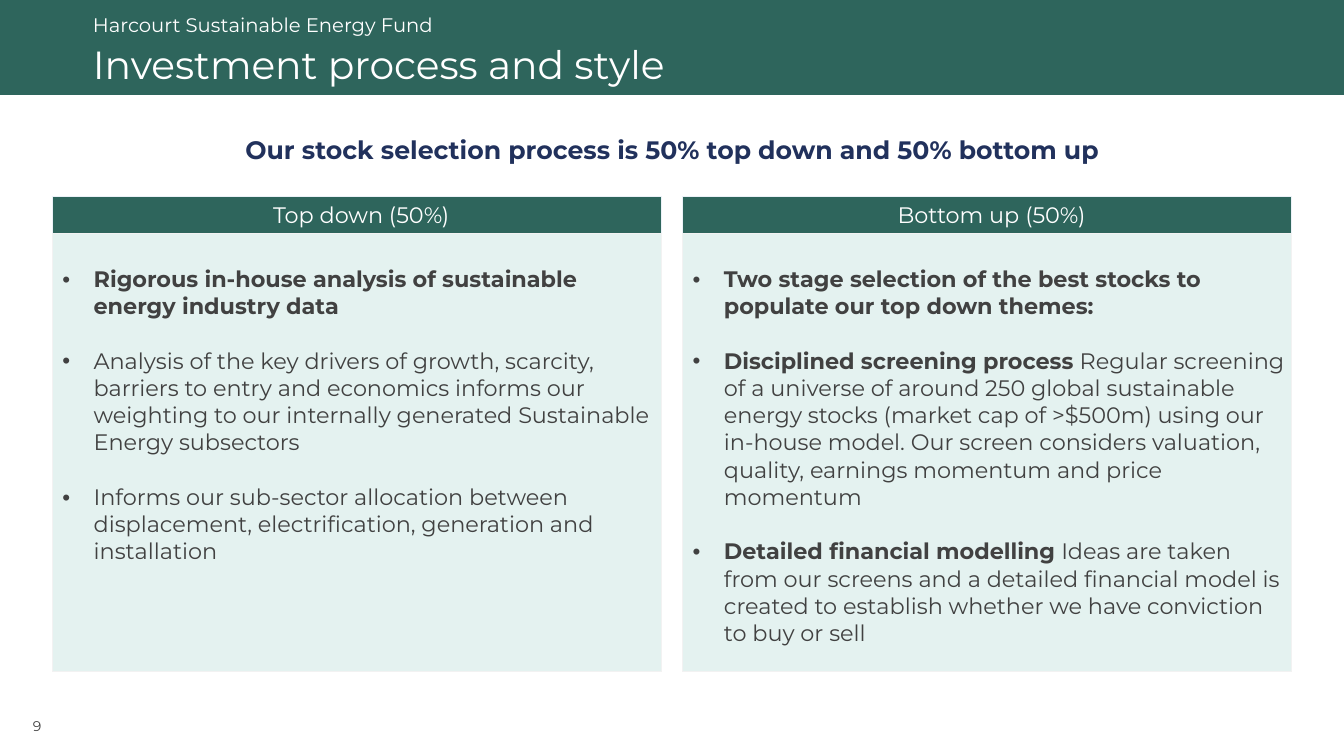
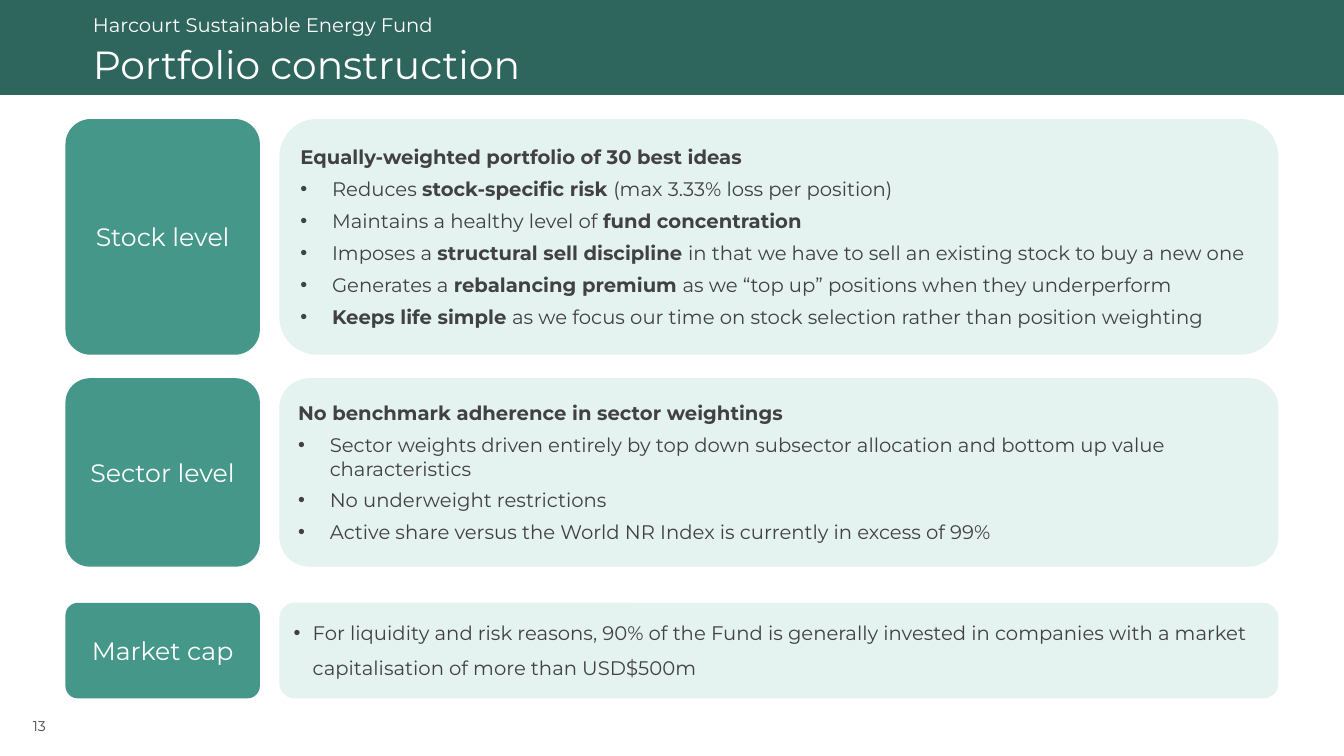
from dataclasses import dataclass

from lxml import etree
from pptx import Presentation
from pptx import util as u
from pptx.dml import color
from pptx.enum import shapes, text
from pptx.oxml import ns


@dataclass(frozen=True)
class Theme:
    font: str = "Montserrat"
    dark_green: str = "2E655C"
    mid_green: str = "45978A"
    pale_green: str = "A6D6CE"
    pale_opacity: int = 30
    navy: str = "21315C"
    grey: str = "414141"
    white: str = "FFFFFF"
    header_border: str = "EBF1F7"
    body_border: str = "F2F2F2"
    title_size: int = 28
    heading_size: int = 18
    column_size: int = 16
    text_size: int = 14
    number_size: int = 10


@dataclass(frozen=True)
class Box:
    left: float
    top: float
    width: float
    height: float

    def lengths(self):
        return [u.Cm(value) for value in (self.left, self.top, self.width, self.height)]


THEME = Theme()
SLIDE_WIDTH, SLIDE_HEIGHT = 33.87, 19.05
BAND = Box(0, 0, SLIDE_WIDTH, 2.39)
TITLE = Box(2.34, 0.99, 29.2, 1.37)
FUND_NAME = Box(2.34, 0.25, 29.2, 0.56)
PAGE_NUMBER = Box(0.58, 17.78, 1.68, 1.02)
HEADLINE = Box(2.34, 2.87, 29.2, 1.37)

COLUMNS = [
    ("Top down (50%)", [
        "**Rigorous in-house analysis of sustainable energy industry data**",
        "Analysis of the key drivers of growth, scarcity, barriers to entry and economics "
        "informs our weighting to our internally generated Sustainable Energy subsectors",
        "Informs our sub-sector allocation between displacement, electrification, "
        "generation and installation",
    ]),
    ("Bottom up (50%)", [
        "**Two stage selection of the best stocks to populate our top down themes:**",
        "**Disciplined screening process** Regular screening of a universe of around 250 "
        "global sustainable energy stocks (market cap of >$500m) using our in-house model. "
        "Our screen considers valuation, quality, earnings momentum and price momentum",
        "**Detailed financial modelling** Ideas are taken from our screens and a detailed "
        "financial model is created to establish whether we have conviction to buy or sell",
    ]),
]

LEVELS = [
    ("Stock level", 3.0, 5.94, "Equally-weighted portfolio of 30 best ideas", [
        "Reduces **stock-specific risk **(max 3.33% loss per position)",
        "Maintains a healthy level of **fund concentration**",
        "Imposes a **structural sell discipline **in that we have to sell an existing "
        "stock to buy a new one",
        "Generates a **rebalancing premium **as we “top up” positions when they underperform",
        "**Keeps life simple **as we focus our time on stock selection rather than "
        "position weighting",
    ]),
    ("Sector level", 9.53, 4.75, "No benchmark adherence in sector weightings", [
        "Sector weights driven entirely by top down subsector allocation and bottom up "
        "value characteristics",
        "No underweight restrictions",
        "Active share versus the World NR Index is currently in excess of 99%",
    ]),
    ("Market cap", 15.19, 2.41, None, [
        "For liquidity and risk reasons, 90% of the Fund is generally invested in companies "
        "with a market capitalisation of more than USD$500m",
    ]),
]


def rgb(value):
    return color.RGBColor.from_string(value)


def set_fill(target, value, opacity=100):
    target.fill.solid()
    target.fill.fore_color.rgb = rgb(value)
    if opacity < 100:
        colour = target.fill._xPr.find(ns.qn("a:solidFill")).find(ns.qn("a:srgbClr"))
        etree.SubElement(colour, ns.qn("a:alpha"), val=str(opacity * 1000))


def set_borders(cell, sides):
    properties = cell._tc.get_or_add_tcPr()
    for index, (side, value, width) in enumerate(sides):
        line = etree.Element(ns.qn(f"a:ln{side}"), w=str(int(u.Pt(width))))
        solid = etree.SubElement(line, ns.qn("a:solidFill"))
        etree.SubElement(solid, ns.qn("a:srgbClr"), val=value)
        properties.insert(index, line)


def set_margins(target, left, top, right, bottom):
    target.margin_left, target.margin_top = u.Cm(left), u.Cm(top)
    target.margin_right, target.margin_bottom = u.Cm(right), u.Cm(bottom)


def set_bullet(paragraph, indent):
    properties = paragraph._p.get_or_add_pPr()
    properties.set("marL", str(int(u.Cm(indent))))
    properties.set("indent", str(-int(u.Cm(indent))))
    if indent:
        etree.SubElement(properties, ns.qn("a:buFont"), typeface="Arial")
        etree.SubElement(properties, ns.qn("a:buChar"), char="•")
    else:
        etree.SubElement(properties, ns.qn("a:buNone"))


def write(paragraph, words, size, value, align=text.PP_ALIGN.LEFT, indent=0,
          before=0, after=0, spacing=1.0):
    paragraph.alignment = align
    paragraph.line_spacing = spacing
    paragraph.space_before, paragraph.space_after = u.Pt(before), u.Pt(after)
    set_bullet(paragraph, indent)
    for index, part in enumerate(words.split("**")):
        if part:
            run = paragraph.add_run()
            run.text = part
            run.font.name = THEME.font
            run.font.size = u.Pt(size)
            run.font.bold = index % 2 == 1
            run.font.color.rgb = rgb(value)


def next_paragraph(text_frame, index):
    return text_frame.add_paragraph() if index else text_frame.paragraphs[0]


def add_box(slide, kind, box, value, opacity=100):
    shape = slide.shapes.add_shape(kind, *box.lengths())
    shape.shadow.inherit = False
    shape.line.fill.background()
    set_fill(shape, value, opacity)
    return shape


def add_text(slide, box, anchor, words, size, value, **options):
    text_frame = slide.shapes.add_textbox(*box.lengths()).text_frame
    text_frame.word_wrap = True
    text_frame.vertical_anchor = anchor
    write(text_frame.paragraphs[0], words, size, value, **options)


def prepare_layout(presentation):
    layout = presentation.slide_layouts[1]
    for placeholder, box in zip(layout.placeholders, (TITLE, FUND_NAME)):
        placeholder.left, placeholder.top, placeholder.width, placeholder.height = box.lengths()
    return layout


def move_band_to_layout(slide, layout):
    band = add_box(slide, shapes.MSO_SHAPE.RECTANGLE, BAND, THEME.dark_green)
    layout.shapes._spTree.insert(2, band._element)


def add_page(presentation, layout, title, number):
    slide = presentation.slides.add_slide(layout)
    heading, fund_name = slide.shapes.title, slide.placeholders[1]
    for placeholder, words, size, anchor in (
        (heading, title, THEME.title_size, text.MSO_ANCHOR.MIDDLE),
        (fund_name, "Harcourt Sustainable Energy Fund", THEME.text_size, text.MSO_ANCHOR.TOP),
    ):
        text_frame = placeholder.text_frame
        text_frame.auto_size = text.MSO_AUTO_SIZE.NONE
        text_frame.vertical_anchor = anchor
        set_margins(text_frame, 0, 0.13, 0.25, 0.13)
        write(text_frame.paragraphs[0], words, size, THEME.white, spacing=0.9)
    add_text(slide, PAGE_NUMBER, text.MSO_ANCHOR.MIDDLE, str(number),
             THEME.number_size, THEME.grey)
    return slide


def add_column(slide, box, heading, points):
    header_height = 0.94
    table = slide.shapes.add_table(2, 1, *box.lengths()).table
    table.first_row = table.horz_banding = False
    table.rows[0].height = u.Cm(header_height)
    table.rows[1].height = u.Cm(box.height - header_height)
    header, body = table.cell(0, 0), table.cell(1, 0)

    set_fill(header, THEME.dark_green)
    set_borders(header, [(side, THEME.header_border, 1) for side in "LRT"]
                + [("B", THEME.body_border, 0.5)])
    set_margins(header, 0.25, 0.03, 0.03, 0)
    header.vertical_anchor = text.MSO_ANCHOR.MIDDLE
    write(header.text_frame.paragraphs[0], heading, THEME.column_size, THEME.white,
          align=text.PP_ALIGN.CENTER)

    set_fill(body, THEME.pale_green, THEME.pale_opacity)
    set_borders(body, [(side, THEME.body_border, 0.5) for side in "LRTB"])
    set_margins(body, 0.25, 0.81, 0.03, 0)
    for index, point in enumerate(points):
        write(next_paragraph(body.text_frame, index), point, THEME.column_size, THEME.grey,
              indent=0.79, before=19.5 if index else 0)


def add_level(slide, box, label, heading, points):
    label_width, gap = 4.9, 0.49
    rounded = shapes.MSO_SHAPE.ROUNDED_RECTANGLE
    panel_left = box.left + label_width + gap
    panel_box = Box(panel_left, box.top, box.left + box.width - panel_left, box.height)
    panel = add_box(slide, rounded, panel_box, THEME.pale_green, THEME.pale_opacity)
    panel.adjustments[0] = 0.16
    text_frame = panel.text_frame
    text_frame.word_wrap = True
    text_frame.vertical_anchor = text.MSO_ANCHOR.MIDDLE
    if heading:
        write(text_frame.paragraphs[0], f"**{heading}**", THEME.text_size, THEME.grey, after=6)
        indent, spacing = 0.8, 1.0
    else:
        set_margins(text_frame, 0.25, 0, 0.25, 0.3)
        indent, spacing = 0.48, 1.5
    for index, point in enumerate(points, start=1 if heading else 0):
        write(next_paragraph(text_frame, index), point, THEME.text_size, THEME.grey,
              indent=indent, spacing=spacing, after=6)

    tile = add_box(slide, rounded, Box(box.left, box.top, label_width, box.height),
                   THEME.mid_green)
    tile.adjustments[0] = 0.13
    tile.text_frame.word_wrap = True
    tile.text_frame.vertical_anchor = text.MSO_ANCHOR.MIDDLE
    write(tile.text_frame.paragraphs[0], label, THEME.heading_size, THEME.white,
          align=text.PP_ALIGN.CENTER)


def build_process(slide):
    add_text(slide, HEADLINE, text.MSO_ANCHOR.TOP,
             "**Our stock selection process is 50% top down and 50% bottom up**",
             THEME.heading_size, THEME.navy, align=text.PP_ALIGN.CENTER, spacing=1.5)
    margin, gap = 1.32, 0.54
    width = (SLIDE_WIDTH - 2 * margin - gap) / len(COLUMNS)
    for index, (heading, points) in enumerate(COLUMNS):
        add_column(slide, Box(margin + index * (width + gap), 4.95, width, 11.96),
                   heading, points)


def build_portfolio(slide):
    margin = 1.65
    for label, top, height, heading, points in LEVELS:
        add_level(slide, Box(margin, top, SLIDE_WIDTH - 2 * margin, height),
                  label, heading, points)


def main():
    presentation = Presentation()
    presentation.slide_width, presentation.slide_height = u.Cm(SLIDE_WIDTH), u.Cm(SLIDE_HEIGHT)
    layout = prepare_layout(presentation)
    process = add_page(presentation, layout, "Investment process and style", 9)
    move_band_to_layout(process, layout)
    build_process(process)
    build_portfolio(add_page(presentation, layout, "Portfolio construction", 13))
    presentation.save("out.pptx")


if __name__ == "__main__":
    main()
